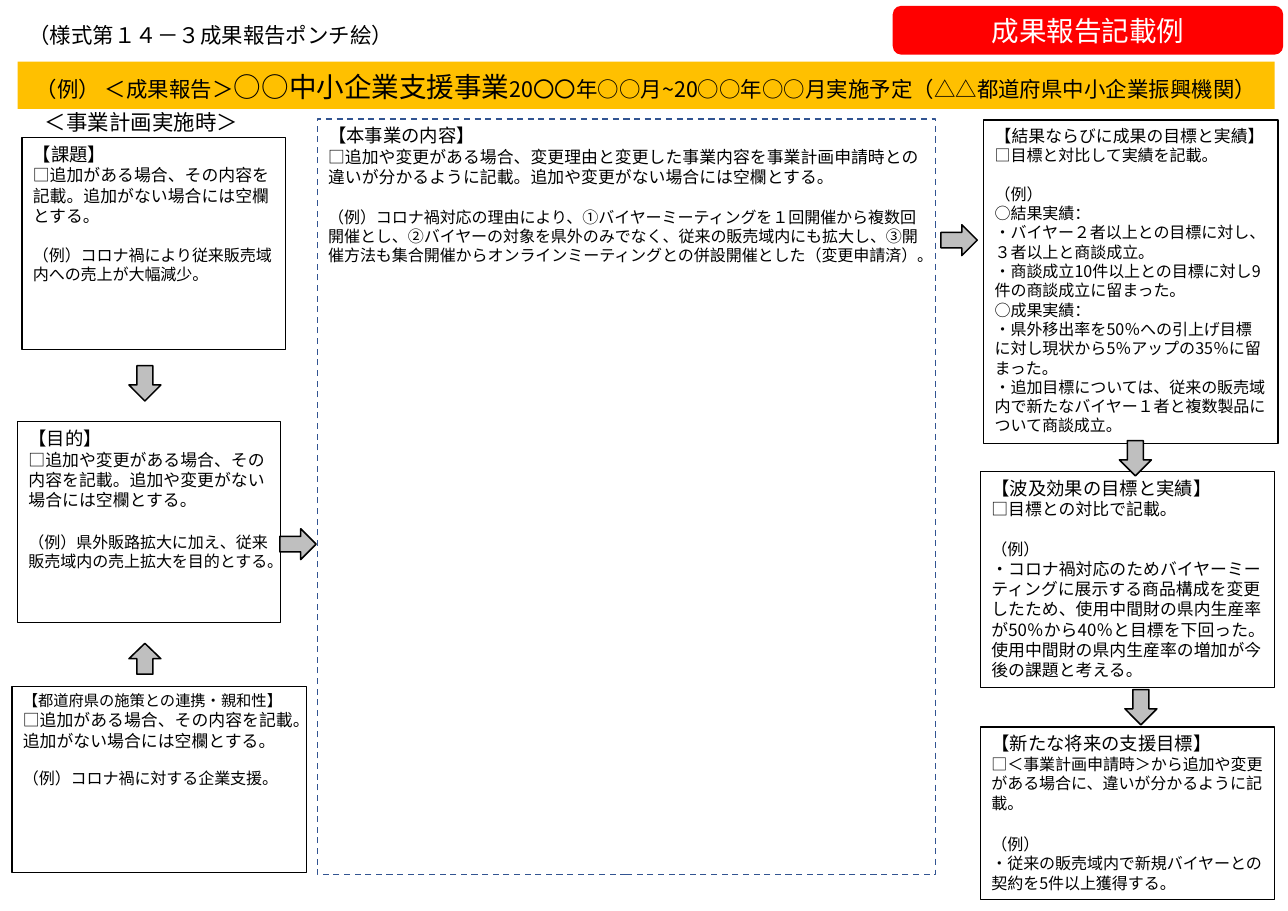
from pptx import Presentation
from pptx.dml.color import RGBColor
from pptx.enum.dml import MSO_LINE
from pptx.enum.shapes import MSO_SHAPE
from pptx.enum.text import MSO_ANCHOR, MSO_AUTO_SIZE, PP_ALIGN
from pptx.oxml.ns import qn
from pptx.util import Pt
from lxml.etree import SubElement

PX = 9144
W, H = 1169, 827
FONT = "Noto Sans CJK JP"
LINE = 1.2

TITLE = [
    ("（例） ＜成果報告＞", 14),
    ("○○中小企業支援事業", 18),
    ("20〇〇年○○月~20○○年○○月実施予定（△△都道府県中小企業振興機関）", 14),
]
LABELS = [
    ("＜事業計画実施時＞", (31, 94, 197, 34)),
    ("（様式第１４－３成果報告ポンチ絵）", (16, 15, 354, 34)),
]
BADGE = "成果報告記載例"

BOXES = [
    ((20, 125, 239, 192), "000000", 0.75, [
        ("【課題】", 12, 0),
        ("□追加がある場合、その内容を記載。追加がない場合には空欄とする。", 11, 0),
        ("（例）コロナ禍により従来販売域内への売上が大幅減少。", 10.5, 10.5),
    ]),
    ((16, 383, 239, 182), "000000", 0.75, [
        ("【目的】", 12, 0),
        ("□追加や変更がある場合、その内容を記載。追加や変更がない場合には空欄とする。", 11, 0),
        ("（例）県外販路拡大に加え、従来販売域内の売上拡大を目的とする。", 10.5, 12),
    ]),
    ((11, 623, 267, 169), "000000", 0.75, [
        ("【都道府県の施策との連携・親和性】", 10, 0),
        ("□追加がある場合、その内容を記載。追加がない場合には空欄とする。", 11, 0),
        ("（例）コロナ禍に対する企業支援。", 10.5, 10),
    ]),
    ((288, 108, 561, 686), "325491", 1, [
        ("【本事業の内容】", 12, 0),
        ("□追加や変更がある場合、変更理由と変更した事業内容を事業計画申請時との違いが分かるように記載。"
         "追加や変更がない場合には空欄とする。", 11, 0),
        ("（例）コロナ禍対応の理由により、①バイヤーミーティングを１回開催から複数回開催とし、"
         "②バイヤーの対象を県外のみでなく、従来の販売域内にも拡大し、"
         "③開催方法も集合開催からオンラインミーティングとの併設開催とした（変更申請済）。", 10.5, 11),
    ]),
    ((893, 109, 267, 294), "000000", 0.75, [
        ("【結果ならびに成果の目標と実績】", 11, 0),
        ("□目標と対比して実績を記載。", 10.5, 0),
        ("（例）", 10.5, 10.5),
        ("○結果実績：", 10.5, 0),
        ("・バイヤー２者以上との目標に対し、３者以上と商談成立。", 10.5, 0),
        ("・商談成立10件以上との目標に対し9件の商談成立に留まった。", 10.5, 0),
        ("○成果実績：", 10.5, 0),
        ("・県外移出率を50％への引上げ目標に対し現状から5％アップの35％に留まった。", 10.5, 0),
        ("・追加目標については、従来の販売域内で新たなバイヤー１者と複数製品について商談成立。", 10.5, 0),
    ]),
    ((890, 428, 267, 196), "000000", 0.75, [
        ("【波及効果の目標と実績】", 12, 0),
        ("□目標との対比で記載。", 11, 0),
        ("（例）", 10.5, 11),
        ("・コロナ禍対応のためバイヤーミーティングに展示する商品構成を変更したため、"
         "使用中間財の県内生産率が50％から40％と目標を下回った。"
         "使用中間財の県内生産率の増加が今後の課題と考える。", 11, 0),
    ]),
    ((890, 660, 267, 157), "000000", 0.75, [
        ("【新たな将来の支援目標】", 12, 0),
        ("□＜事業計画申請時＞から追加や変更がある場合に、違いが分かるように記載。", 10.5, 0),
        ("（例）", 10.5, 12),
        ("・従来の販売域内で新規バイヤーとの契約を5件以上獲得する。", 10.5, 0),
    ]),
]

ARROWS = [
    (MSO_SHAPE.DOWN_ARROW, (117, 332, 29, 32)),
    (MSO_SHAPE.UP_ARROW, (117, 584, 29, 28)),
    (MSO_SHAPE.RIGHT_ARROW, (254, 480, 33, 28)),
    (MSO_SHAPE.DOWN_ARROW, (1016, 400, 29, 32)),
    (MSO_SHAPE.DOWN_ARROW, (1021, 626, 29, 32)),
    (MSO_SHAPE.RIGHT_ARROW, (854, 204, 33, 28)),
]


def rgb(value):
    return RGBColor.from_string(value)


def emu(at):
    return [v * PX for v in at]


def add_run(p, text, size, color="000000"):
    r = p.add_run()
    r.text = text
    r.font.size = Pt(size)
    r.font.name = FONT
    r.font.color.rgb = rgb(color)
    SubElement(r.font._element, qn("a:ea")).set("typeface", FONT)


def add_shape(s, kind, at, fill=None, line="000000", width=1):
    sp = s.shapes.add_shape(kind, *emu(at))
    sp.shadow.inherit = False
    if fill:
        sp.fill.solid()
        sp.fill.fore_color.rgb = rgb(fill)
    else:
        sp.fill.background()
    sp.line.color.rgb = rgb(line)
    sp.line.width = Pt(width)
    return sp


def add_title(s):
    sp = s.shapes.title
    sp.left, sp.top, sp.width, sp.height = emu((16, 56, 1141, 43))
    sp.fill.solid()
    sp.fill.fore_color.rgb = rgb("FFC000")
    tf = sp.text_frame
    tf.auto_size = MSO_AUTO_SIZE.NONE
    tf.vertical_anchor = MSO_ANCHOR.BOTTOM
    p = tf.paragraphs[0]
    p.alignment = PP_ALIGN.CENTER
    p.line_spacing = Pt(15.5)
    for text, size in TITLE:
        add_run(p, text, size)


def add_box(s, at, line, width, paras):
    sp = add_shape(s, MSO_SHAPE.RECTANGLE, at, None, line, width)
    if line != "000000":
        sp.line.dash_style = MSO_LINE.DASH
    tf = sp.text_frame
    tf.word_wrap = True
    tf.vertical_anchor = MSO_ANCHOR.TOP
    for i, (text, size, gap) in enumerate(paras):
        p = tf.add_paragraph() if i else tf.paragraphs[0]
        p.alignment = PP_ALIGN.LEFT
        p.line_spacing = Pt(size * LINE)
        p.space_before = Pt(gap * LINE)
        add_run(p, text, size)


def add_label(s, text, at):
    tf = s.shapes.add_textbox(*emu(at)).text_frame
    tf.word_wrap = False
    p = tf.paragraphs[0]
    p.line_spacing = Pt(14 * LINE)
    add_run(p, text, 14)


def add_badge(s):
    sp = add_shape(s, MSO_SHAPE.ROUNDED_RECTANGLE, (811, 6, 353, 43), "FF0000", "FF0000")
    tf = sp.text_frame
    tf.vertical_anchor = MSO_ANCHOR.MIDDLE
    p = tf.paragraphs[0]
    p.alignment = PP_ALIGN.CENTER
    add_run(p, BADGE, 18, "FFFFFF")


def main():
    prs = Presentation()
    prs.slide_width, prs.slide_height = W * PX, H * PX
    s = prs.slides.add_slide(prs.slide_layouts[5])
    add_title(s)
    for box in BOXES:
        add_box(s, *box)
    for kind, at in ARROWS:
        add_shape(s, kind, at, "BFBFBF")
    for text, at in LABELS:
        add_label(s, text, at)
    add_badge(s)
    prs.save("out.pptx")


if __name__ == "__main__":
    main()
